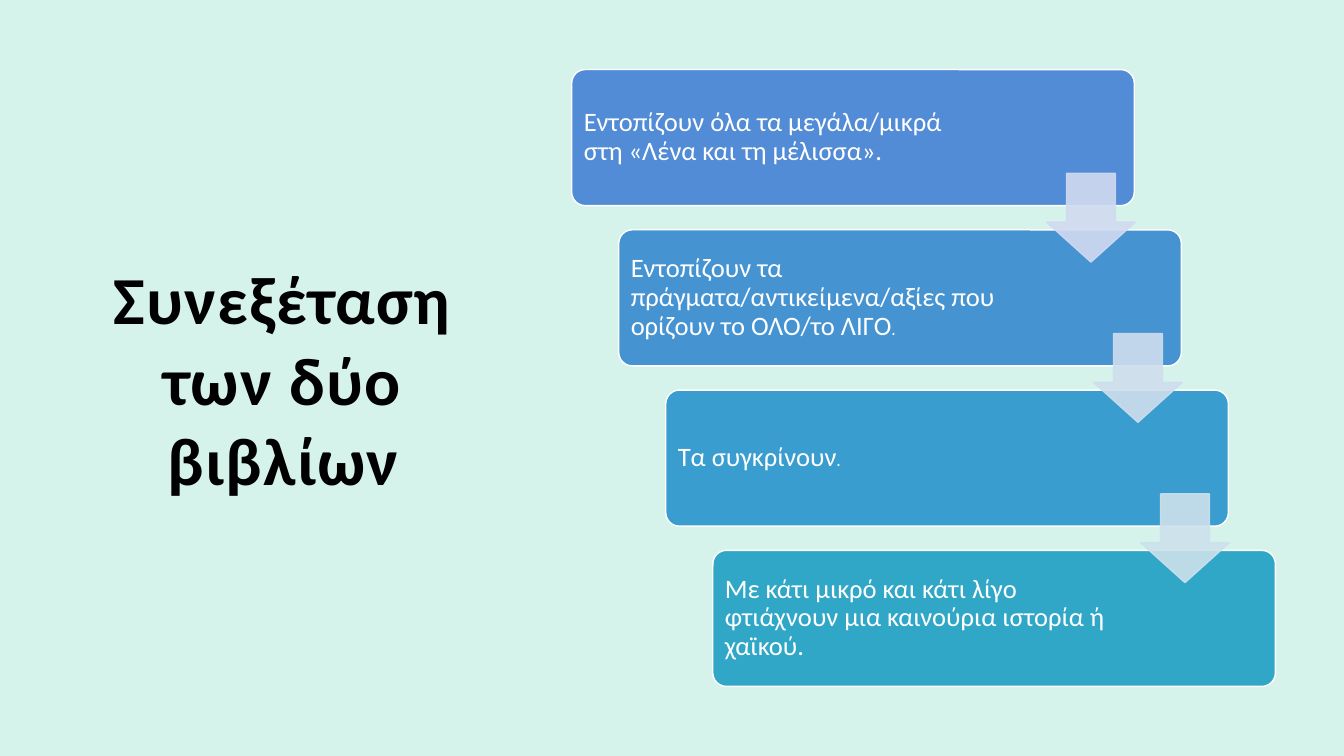
"""Build a slide with a title and a four-step descending process."""
from lxml import etree
from pptx import Presentation
from pptx import util as u
from pptx.dml.color import RGBColor
from pptx.enum import shapes, text
from pptx.oxml import ns

TITLE = "Συνεξέταση των δύο βιβλίων"
STEPS = [
    [("Εντοπίζουν όλα τα μεγάλα/μικρά στη «Λένα και τη μέλισσα».", "Calibri")],
    [("Εντοπίζουν τα πράγματα/αντικείμενα/αξίες που ορίζουν το ΟΛΟ/το ΛΙΓΟ", "Calibri"),
     (".", "Comic Neue")],
    [("Τα συγκρίνουν", "Calibri"), (".", "Comic Neue")],
    [("Με κάτι μικρό και κάτι λίγο φτιάχνουν μια καινούρια ιστορία ή χαϊκού.", "Calibri")],
]
LABEL_WIDTHS = [4.02, 4.16, 4.16, 4.16]
COLORS = {"background": "D5F2EB", "title": "000000", "white": "FFFFFF"}
STEP_COLORS = ["528BD6", "4693D2", "399DCF", "31A7C7"]
ARROW_COLORS = ["D1DAF0", "CFDEED", "CDE1EB"]

WIDTH, HEIGHT = 13.33, 7.5
STEP_WIDTH, STEP_HEIGHT = 5.58, 0.18 * HEIGHT
FIRST_LEFT, FIRST_TOP = 5.67, 0.69
SHIFT_X, SHIFT_Y = 0.035 * WIDTH, 1.59
LABEL_GAP = 0.04
ARROW_SIZE = 0.88
ARROW_X, ARROW_Y = 4.71, 1.03


def add_shape(slide, kind, box, fill, line, adjustments, opacity=100):
    shape = slide.shapes.add_shape(kind, *map(u.Inches, box))
    shape.shadow.inherit = False
    for index, value in enumerate(adjustments):
        shape.adjustments[index] = value
    shape.fill.solid()
    shape.fill.fore_color.rgb = RGBColor.from_string(fill)
    shape.line.color.rgb = RGBColor.from_string(line)
    shape.line.width = u.Pt(1)
    if opacity < 100:
        for color in shape.element.spPr.iter(ns.qn("a:srgbClr")):
            etree.SubElement(color, ns.qn("a:alpha"), val=str(opacity * 1000))


def add_text(slide, box, runs, size, color, inset=None, bold=False):
    frame = slide.shapes.add_textbox(*map(u.Inches, box)).text_frame
    frame.word_wrap = True
    frame.vertical_anchor = text.MSO_ANCHOR.MIDDLE
    if inset is not None:
        frame.margin_left = frame.margin_right = u.Inches(inset)
        frame.margin_top = frame.margin_bottom = u.Inches(inset)
    paragraph = frame.paragraphs[0]
    for words, font_name in runs:
        run = paragraph.add_run()
        run.text = words
        run.font.name = font_name
        run.font.size = u.Pt(size)
        run.font.bold = bold
        run.font.color.rgb = RGBColor.from_string(color)
    return paragraph


def main():
    presentation = Presentation()
    presentation.slide_width = u.Inches(WIDTH)
    presentation.slide_height = u.Inches(HEIGHT)
    slide = presentation.slides.add_slide(presentation.slide_layouts[6])
    slide.background.fill.solid()
    slide.background.fill.fore_color.rgb = RGBColor.from_string(COLORS["background"])

    title = add_text(slide, (0.51, 1.07, 4.6, 5.37), [(TITLE, "Calibri")], 48,
                     COLORS["title"], bold=True)
    title.alignment = text.PP_ALIGN.CENTER
    title.runs[0].font._element.set("spc", "100")

    corners = [(FIRST_LEFT + SHIFT_X * i, FIRST_TOP + SHIFT_Y * i) for i in range(len(STEPS))]
    for (left, top), runs, fill, label_width in zip(corners, STEPS, STEP_COLORS, LABEL_WIDTHS):
        add_shape(slide, shapes.MSO_SHAPE.ROUNDED_RECTANGLE,
                  (left, top, STEP_WIDTH, STEP_HEIGHT), fill, COLORS["white"], [0.1])
        label_box = (left + LABEL_GAP, top + LABEL_GAP, label_width, STEP_HEIGHT - 2 * LABEL_GAP)
        label = add_text(slide, label_box, runs, 19, COLORS["white"], inset=0.08)
        label.line_spacing = 0.9

    for (left, top), color in zip(corners, ARROW_COLORS):
        add_shape(slide, shapes.MSO_SHAPE.DOWN_ARROW,
                  (left + ARROW_X, top + ARROW_Y, ARROW_SIZE, ARROW_SIZE),
                  color, color, [0.55, 0.45], opacity=90)

    presentation.save("out.pptx")


if __name__ == "__main__":
    main()
